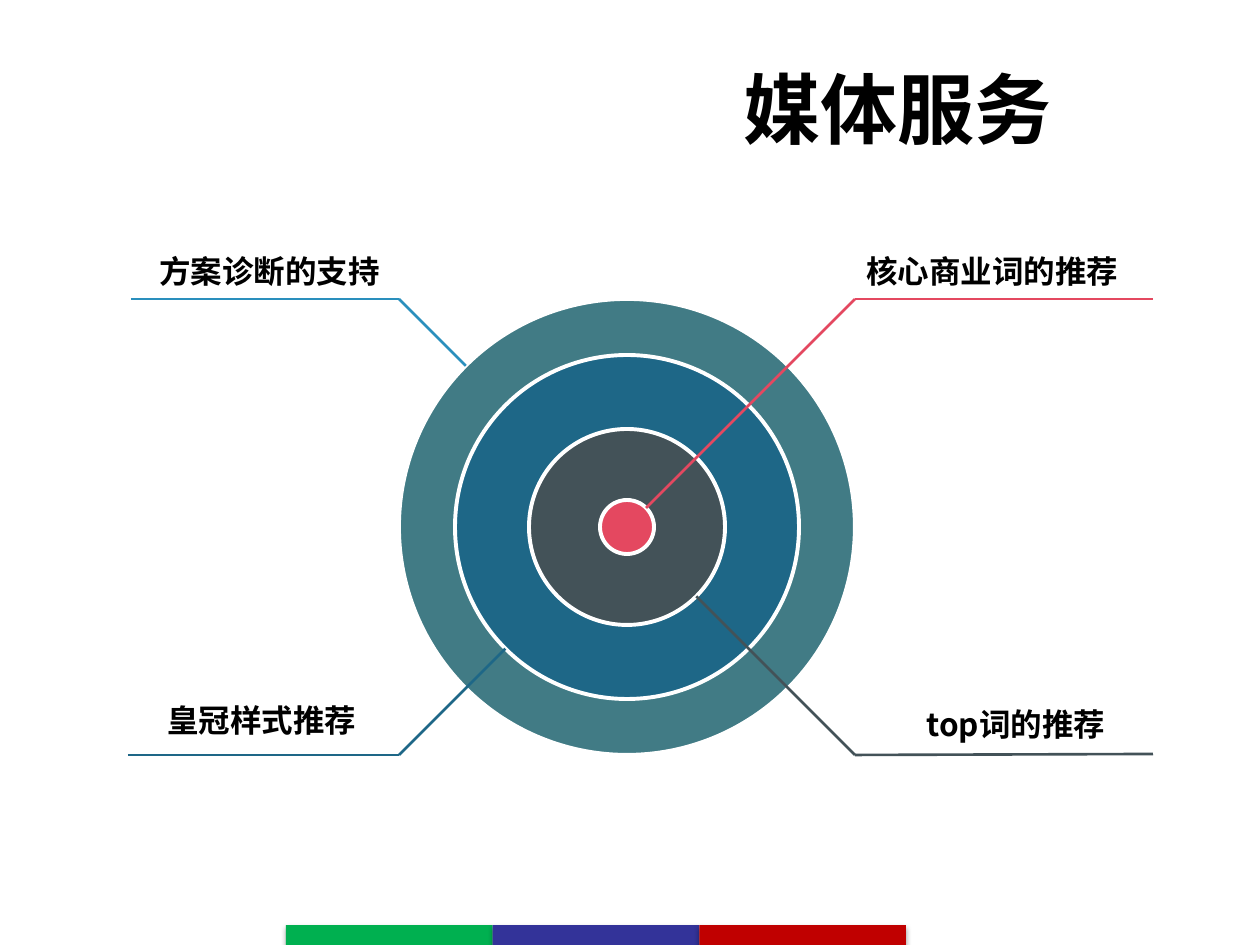
from math import sqrt

from lxml.etree import SubElement
from pptx import Presentation
from pptx.dml.color import RGBColor
from pptx.enum.shapes import MSO_CONNECTOR as Connector, MSO_SHAPE as Shape
from pptx.enum.text import MSO_ANCHOR as Anchor, PP_ALIGN as Align
from pptx.oxml.ns import qn
from pptx.util import Emu, Pt

SLIDE_W, SLIDE_H = 1260, 945
EMU_PER_PX = 914400 / 126
FONT = "Noto Sans CJK SC"
COLORS = {
    "text": "000000", "outline": "FFFFFF", "shadow": "000000",
    "teal": "417B85", "blue": "1E6787", "slate": "435258", "red": "E44860",
    "sky": "2A8FBD",
    "bar_green": "00B050", "bar_indigo": "333399", "bar_crimson": "C00000",
}
# Diameter and fill, from the outermost ring inwards
RINGS = [(456, "teal"), (344, "blue"), (196, "slate"), (54, "red")]
# Side and vertical direction, ring touched, far end, line colour, text, text box
LEADERS = [
    (1, 1, 2, (1153, 754), "slate", "top词的推荐", (914, 699, 318, 50)),
    (-1, 1, 1, (128, 755), "blue", "皇冠样式推荐", (155, 695, 348, 50)),
    (1, -1, 3, (1153, 299), "red", "核心商业词的推荐", (854, 246, 348, 50)),
    (-1, -1, 0, (131, 299), "sky", "方案诊断的支持", (147, 246, 348, 50)),
]
BARS = ["bar_green", "bar_indigo", "bar_crimson"]


def px(*lengths):
    return [Emu(round(length * EMU_PER_PX)) for length in lengths]


def color(name):
    return RGBColor.from_string(COLORS[name])


def add_text(slide, box, text, size, align=Align.LEFT, anchor=Anchor.TOP):
    frame = slide.shapes.add_textbox(*px(*box)).text_frame
    for name, value in {"word_wrap": True, "vertical_anchor": anchor}.items():
        setattr(frame, name, value)
    paragraph = frame.paragraphs[0]
    paragraph.text = text
    paragraph.alignment = align
    font = paragraph.runs[0].font
    for name, value in {"name": FONT, "size": Pt(size), "bold": True}.items():
        setattr(font, name, value)
    font.color.rgb = color("text")
    # Chinese glyphs take their typeface from a:ea
    SubElement(font._element, qn("a:ea"), typeface=FONT)


def add_line(slide, start, end, line_color):
    line = slide.shapes.add_connector(Connector.STRAIGHT, *px(*start, *end))
    line.line.color.rgb = color(line_color)
    line.line.width = Pt(1.5)
    SubElement(line._element.spPr, qn("a:effectLst"))


def add_target(slide, box):
    """Draw concentric rings and the leaders that bend at the box corners."""
    left, top, width, height = box
    center_x, center_y = left + width / 2, top + height / 2
    for diameter, fill in RINGS:
        ring_box = (center_x - diameter / 2, center_y - diameter / 2, diameter, diameter)
        ring = slide.shapes.add_shape(Shape.OVAL, *px(*ring_box))
        ring.shadow.inherit = False
        ring.fill.solid()
        ring.fill.fore_color.rgb = color(fill)
        ring.line.color.rgb = color("outline")
        ring.line.width = Pt(2.25)

    for side, down, ring_index, far_end, line_color, text, text_box in LEADERS:
        elbow = (center_x + side * width / 2, center_y + down * height / 2)
        reach = RINGS[ring_index][0] / 2 / sqrt(2)
        touch = (center_x + side * reach, center_y + down * reach)
        add_line(slide, far_end, elbow, line_color)
        add_line(slide, elbow, touch, line_color)
        add_text(slide, text_box, text, 18)


def add_shadow(shape):
    shape.shadow.inherit = False
    effects = shape._element.spPr.find(qn("a:effectLst"))
    shadow = SubElement(effects, qn("a:outerShdw"), blurRad=str(Pt(3.1)),
                        dist=str(Pt(1.8)), dir="5400000", rotWithShape="0")
    tint = SubElement(shadow, qn("a:srgbClr"), val=COLORS["shadow"])
    SubElement(tint, qn("a:alpha"), val="35000")


def add_footer(slide, box):
    left, top, width, height = box
    bar_width = width / len(BARS)
    group = slide.shapes.add_group_shape()
    for index, fill in enumerate(BARS):
        bar_box = (left + index * bar_width, top, bar_width, height)
        bar = group.shapes.add_shape(Shape.RECTANGLE, *px(*bar_box))
        bar.fill.solid()
        bar.fill.fore_color.rgb = color(fill)
        bar.line.fill.background()
        add_shadow(bar)


def main():
    deck = Presentation()
    deck.slide_width, deck.slide_height = px(SLIDE_W, SLIDE_H)
    slide = deck.slides.add_slide(deck.slide_layouts[6])
    add_text(slide, (536, 29, 724, 158), "媒体服务", 44, Align.CENTER, Anchor.MIDDLE)
    add_target(slide, (399, 299, 456, 456))
    add_footer(slide, (286, 925, 620, 20))
    deck.save("out.pptx")


if __name__ == "__main__":
    main()
